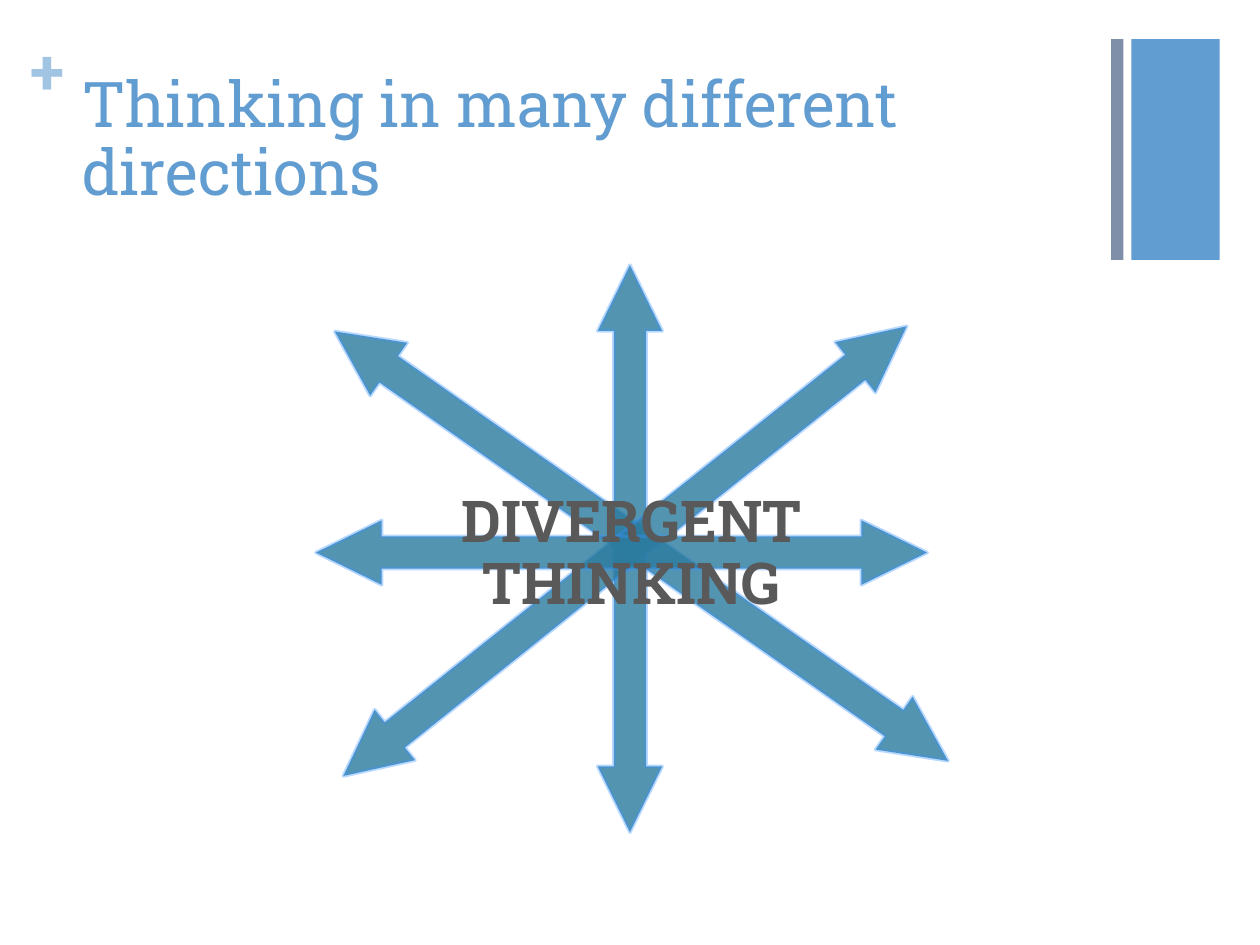
from lxml.etree import SubElement
from pptx import Presentation
from pptx.dml.color import RGBColor
from pptx.enum.shapes import MSO_SHAPE as SHAPE
from pptx.enum.text import MSO_ANCHOR as ANCHOR, PP_ALIGN as ALIGN
from pptx.oxml.ns import qn
from pptx.util import Cm, Pt

FONT = "Roboto Slab"
BLUE, PALE_BLUE, GREY_BLUE = "629DD1", "A1C4E3", "7F8FA9"
ARROW_FILL, ARROW_LINE, DARK_GREY = "2C7C9F", "3A93FF", "595959"

# Arrows: centre x, centre y, length (cm), rotation (degrees)
ARROWS = [
    (12.93, 11.01, 15.09, 215),
    (12.70, 11.06, 11.43, 270),
    (12.60, 11.11, 14.53, 141.4),
    (12.53, 11.14, 12.32, 0),
]
THICKNESS = 1.3


def set_color(color_format, hex_color, alpha=None):
    color_format.rgb = RGBColor.from_string(hex_color)
    if alpha is not None:
        clr = color_format._xFill.find(qn("a:srgbClr"))
        SubElement(clr, qn("a:alpha"), val=str(alpha * 1000))


def set_attrs(obj, values):
    for name, value in values.items():
        setattr(obj, name, value)


def write_text(sp, text, size, color, bold=False, frame=None, para=None):
    tf = sp.text_frame
    set_attrs(tf, {"word_wrap": True, **(frame or {})})
    p = tf.paragraphs[0]
    p.text = text
    set_attrs(p, para or {})
    for r in p.runs:
        set_attrs(r.font, {"name": FONT, "size": Pt(size), "bold": bold})
        set_color(r.font.color, color)


def add_block(shapes, kind, box, color, alpha=None):
    sp = shapes.add_shape(kind, *map(Cm, box))
    sp.shadow.inherit = False
    sp.fill.solid()
    set_color(sp.fill.fore_color, color)
    if alpha is not None:
        clr = sp._element.spPr.find(qn("a:solidFill")).find(qn("a:srgbClr"))
        SubElement(clr, qn("a:alpha"), val=str(alpha * 1000))
    sp.line.fill.background()
    return sp


def add_arrow(shapes, cx, cy, length, angle):
    box = (cx - length / 2, cy - THICKNESS / 2, length, THICKNESS)
    sp = add_block(shapes, SHAPE.LEFT_RIGHT_ARROW, box, ARROW_FILL, 81)
    sp.adjustments[0], sp.adjustments[1] = 0.5, 1.02
    sp.rotation = angle
    sp.line.width = Pt(2)
    sp.line.fill.solid()
    set_color(sp.line.fill.fore_color, ARROW_LINE)
    clr = sp.line._ln.find(qn("a:solidFill")).find(qn("a:srgbClr"))
    SubElement(clr, qn("a:alpha"), val="34000")


def add_label(shapes, box, *args, **kwargs):
    write_text(shapes.add_textbox(*map(Cm, box)), *args, **kwargs)


def main():
    prs = Presentation()
    set_attrs(prs, {"slide_width": Cm(25.4), "slide_height": Cm(19.05)})
    s = prs.slides.add_slide(prs.slide_layouts[5])

    # Corner decoration
    add_block(s.shapes, SHAPE.RECTANGLE, (22.81, 0.79, 1.78, 4.45), BLUE)
    add_block(s.shapes, SHAPE.RECTANGLE, (22.4, 0.79, 0.25, 4.45), GREY_BLUE)
    no_margins = {f"margin_{side}": 0 for side in ("left", "top", "right", "bottom")}
    add_label(s.shapes, (0.61, 0.64, 0.74, 1.55), "+", 36, PALE_BLUE,
              bold=True, frame=no_margins)

    # Crossing arrows with their label
    star = s.shapes.add_group_shape().shapes
    for arrow in ARROWS:
        add_arrow(star, *arrow)
    add_label(star, (6.65, 8.76, 12.17, 3.81), "DIVERGENT\vTHINKING", 33,
              DARK_GREY, bold=True, frame={"vertical_anchor": ANCHOR.BOTTOM},
              para={"alignment": ALIGN.CENTER, "line_spacing": 0.9})

    # Title
    title = s.shapes.title
    set_attrs(title, {"left": Cm(1.4), "top": Cm(1.35),
                      "width": Cm(20.98), "height": Cm(3.1)})
    write_text(title, "Thinking in many different directions", 36, BLUE,
               frame={"vertical_anchor": ANCHOR.TOP},
               para={"alignment": ALIGN.LEFT, "line_spacing": 0.9})

    prs.save("out.pptx")


if __name__ == "__main__":
    main()
